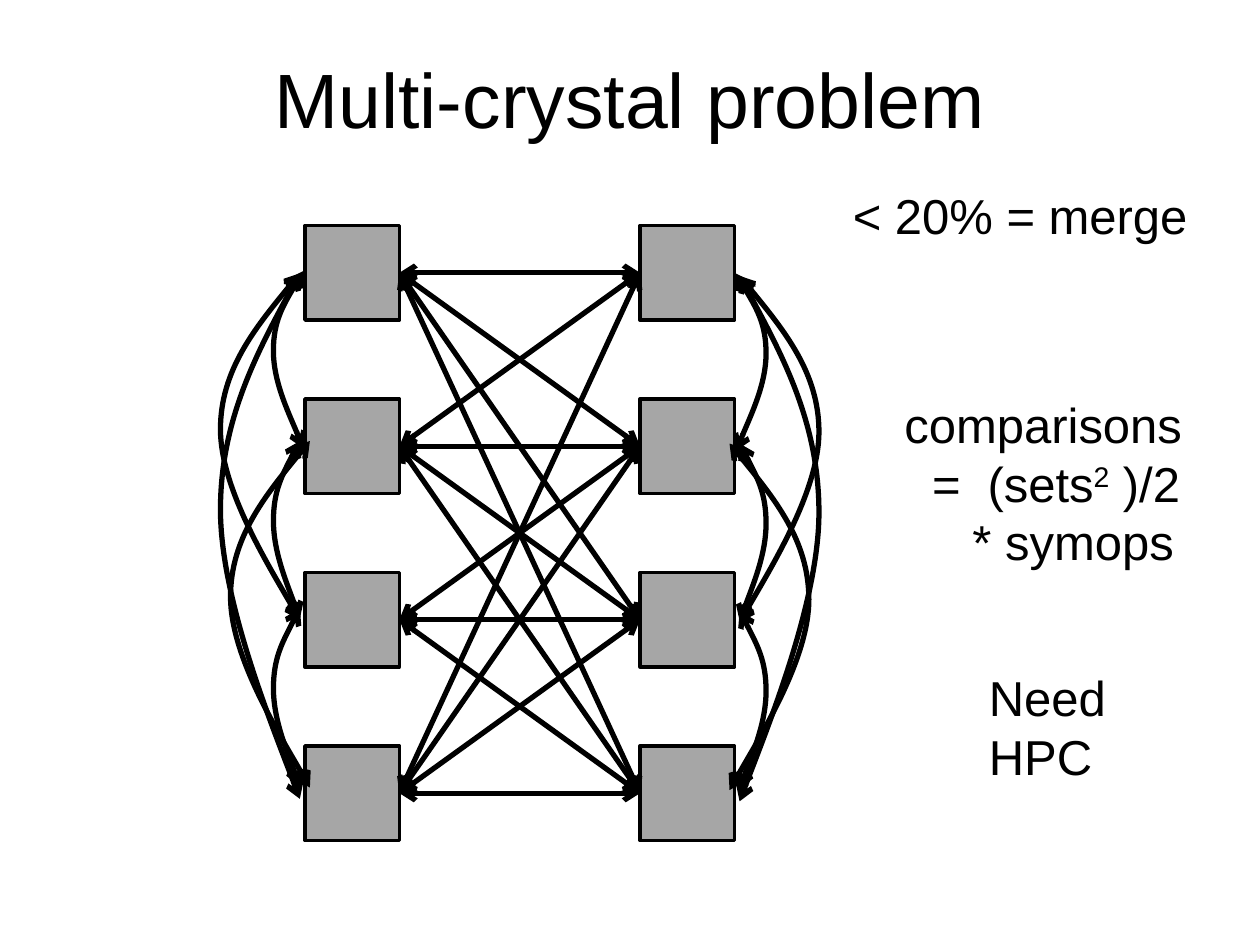
from lxml import etree
from pptx import Presentation
from pptx.dml.color import RGBColor
from pptx.enum.shapes import MSO_CONNECTOR, MSO_SHAPE
from pptx.enum.text import MSO_ANCHOR, PP_ALIGN
from pptx.oxml.ns import qn
from pptx.util import Inches, Pt

STRAIGHT, RECTANGLE = MSO_CONNECTOR.STRAIGHT, MSO_SHAPE.RECTANGLE
TOP, CENTER = MSO_ANCHOR.TOP, PP_ALIGN.CENTER
BLACK, GRAY = RGBColor(0, 0, 0), RGBColor(0xA6, 0xA6, 0xA6)
FONT = "Arial"
LEFT_SIDE, RIGHT_SIDE = 1, 3

# Content
TITLE = "Multi-crystal problem"
# Each note: box, then paragraphs of (margin, first-line indent, [(text, superscript)])
NOTES = [
    ((6.67, 1.42, 2.89, 0.57), [(0, 0, [("< 20% = merge", False)])]),
    ((7.08, 3.08, 2.43, 1.51), [
        (0, 0, [("comparisons", False)]),
        (0.66, -0.44, [("=\t(sets", False), ("2", True), (" )/2", False)]),
        (0.54, 0, [("* symops", False)]),
    ]),
    ((7.75, 5.25, 1.14, 1.04), [(0, 0, [("Need", False)]), (0, 0, [("HPC", False)])]),
]

# Grid of crystals
ROWS = 4
COLUMN_LEFTS = (2.42, 5.08)
FIRST_TOP, LAST_TOP, SIDE = 1.79, 5.92, 0.75
UNLINKED = {(0, 2)}  # (right row, left row)

# Left-hand arcs: end x, bulge x, top, height
ARCS = [
    (2.41, 2.17, 2.15, 1.41),
    (2.38, 1.75, 2.17, 2.75),
    (2.38, 1.75, 2.17, 4.17),
    (2.38, 2.17, 3.50, 1.41),
    (2.38, 2.17, 4.83, 1.41),
    (2.46, 1.83, 3.50, 2.75),
]
# Bezier points as shares of the bulge and of the height
ARC_POINTS = [(0, 0), (0.47, 0.13), (1, 0.28), (1, 0.45), (1, 0.62), (0.22, 0.91), (0, 1)]
MIRROR_SUM, MIRROR_DROP = 8.25, 0.02


def style_arrow(item):
    item.line.color.rgb = BLACK
    item.line.width = Pt(3)
    outline = item.line._get_or_add_ln()
    for end in ("a:headEnd", "a:tailEnd"):
        etree.SubElement(outline, qn(end), type="arrow")


def add_span(para, text, size, raised=False):
    span = para.add_run()
    span.text = text
    span.font.name, span.font.size = FONT, Pt(size)
    span.font.color.rgb = BLACK
    if raised:
        span.font._element.set("baseline", "30000")


def add_arc(group, points):
    """Draw two cubic Bezier segments through seven points."""
    points = [(Inches(x), Inches(y)) for x, y in points]
    builder = group.shapes.build_freeform(*points[0])
    builder.add_line_segments(points[1:], close=False)
    arc = builder.convert_to_shape()
    segments = list(arc._element.iter(qn("a:lnTo")))
    for first in range(0, len(segments), 3):
        curve = etree.Element(qn("a:cubicBezTo"))
        segments[first].addprevious(curve)
        for segment in segments[first:first + 3]:
            curve.append(segment[0])
            segment.getparent().remove(segment)
    arc.fill.background()
    arc.shadow.inherit = False
    style_arrow(arc)


deck = Presentation()
deck.slide_width, deck.slide_height = Inches(10), Inches(7.5)
page = deck.slides.add_slide(deck.slide_layouts[5])

# Title
title = page.shapes.title
title.left, title.top, title.width, title.height = map(Inches, (0.5, 0.3, 9, 1.25))
title.text_frame.vertical_anchor = TOP
title.text_frame.margin_top = Inches(0.11)
title.text_frame.paragraphs[0].alignment = CENTER
add_span(title.text_frame.paragraphs[0], TITLE, 44)

# Crystals
columns = []
for left in COLUMN_LEFTS:
    column = []
    for row in range(ROWS):
        top = FIRST_TOP + (LAST_TOP - FIRST_TOP) * row / (ROWS - 1)
        crystal = page.shapes.add_shape(
            RECTANGLE, Inches(left), Inches(top), Inches(SIDE), Inches(SIDE))
        crystal.shadow.inherit = False
        crystal.fill.solid()
        crystal.fill.fore_color.rgb = GRAY
        crystal.line.color.rgb = BLACK
        crystal.line.width = Pt(2)
        column.append(crystal)
    columns.append(column)

# Comparisons across the columns
left_column, right_column = columns
for right_row, right in enumerate(right_column):
    for left_row, left in enumerate(left_column):
        if (right_row, left_row) in UNLINKED:
            continue
        link = page.shapes.add_connector(STRAIGHT, 0, 0, 0, 0)
        link.begin_connect(right, LEFT_SIDE)
        link.end_connect(left, RIGHT_SIDE)
        style_arrow(link)
        etree.SubElement(link._element.spPr, qn("a:effectLst"))

# Comparisons within each column
for mirrored in (False, True):
    group = page.shapes.add_group_shape()
    for end, bulge, top, height in ARCS:
        points = [(end + (bulge - end) * u, top + height * v) for u, v in ARC_POINTS]
        if mirrored:
            points = [(MIRROR_SUM - x, y + MIRROR_DROP) for x, y in points]
        add_arc(group, points)

# Notes
for place, paragraphs in NOTES:
    box = page.shapes.add_textbox(*map(Inches, place))
    frame = box.text_frame
    frame.word_wrap = True
    for index, (margin, indent, spans) in enumerate(paragraphs):
        para = frame.add_paragraph() if index else frame.paragraphs[0]
        if margin:
            properties = para._p.get_or_add_pPr()
            properties.set("marL", str(Inches(margin)))
            properties.set("indent", str(Inches(indent)))
        for text, raised in spans:
            add_span(para, text, 28, raised)

deck.save("out.pptx")
